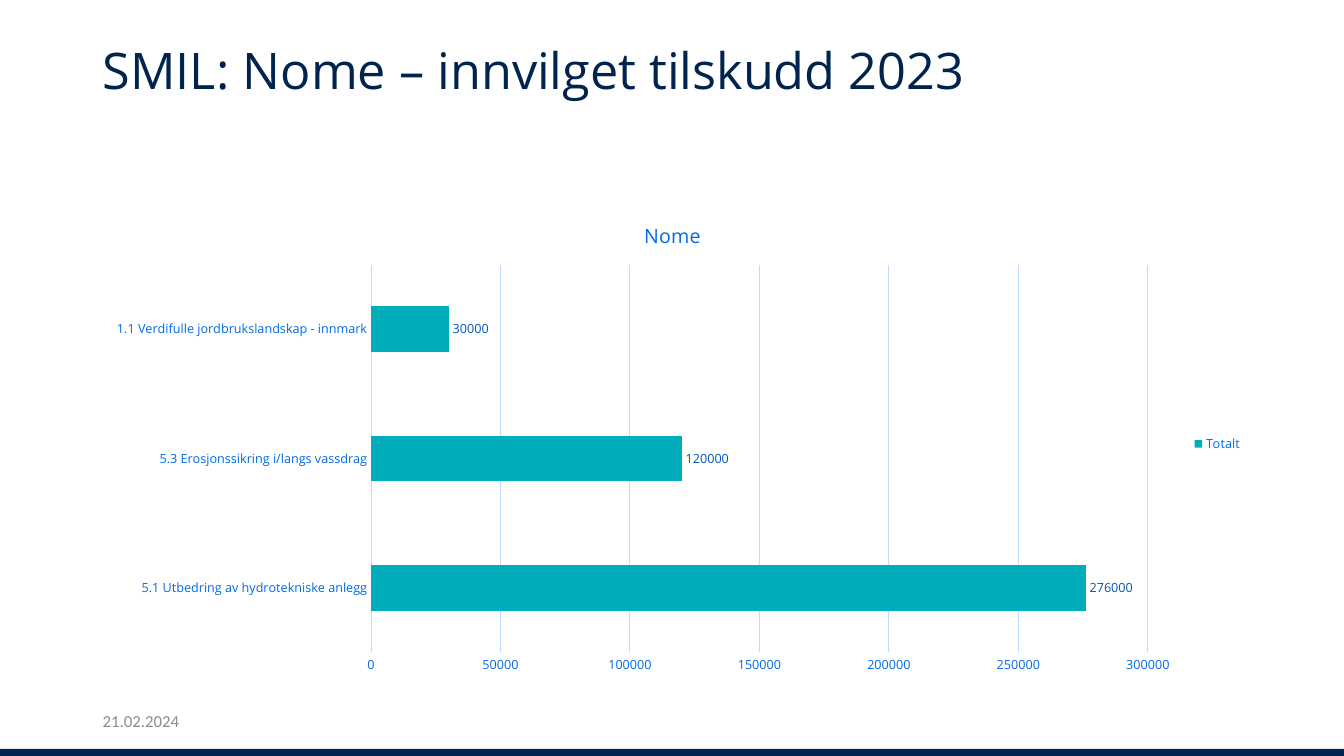
from lxml import etree
from pptx import Presentation
from pptx.chart.data import CategoryChartData
from pptx.dml.color import RGBColor
from pptx.enum.chart import XL_CHART_TYPE, XL_LABEL_POSITION, XL_LEGEND_POSITION, XL_TICK_MARK
from pptx.enum.shapes import MSO_SHAPE
from pptx.enum.text import MSO_ANCHOR, PP_ALIGN
from pptx.oxml import parse_xml
from pptx.oxml.ns import nsdecls, qn
from pptx.util import Inches, Pt

BAR_CLUSTERED = XL_CHART_TYPE.BAR_CLUSTERED
OUTSIDE_END = XL_LABEL_POSITION.OUTSIDE_END
LEGEND_RIGHT = XL_LEGEND_POSITION.RIGHT
NO_TICK = XL_TICK_MARK.NONE
RECTANGLE = MSO_SHAPE.RECTANGLE
TOP, MIDDLE = MSO_ANCHOR.TOP, MSO_ANCHOR.MIDDLE
LEFT = PP_ALIGN.LEFT

COLORS = {
    "navy": "00244E",
    "blue": "006AE5",
    "label": "0056BA",
    "grid": "BEDCFF",
    "teal": "00ADBA",
    "grey": "8C8C8C",
}
BODY_FONT = "Open Sans"


def color(name):
    return RGBColor.from_string(COLORS[name])


def write(frame, text=None, *, size, ink, font=BODY_FONT, anchor=None, spacing=None):
    """Format a text frame, or any chart part that has a font when text is None."""
    target = frame
    if text is not None:
        frame.text = text
        target = frame.paragraphs[0]
        if anchor is not None:
            frame.word_wrap = True
            frame.vertical_anchor = anchor
            target.alignment = LEFT
        if spacing:
            target.line_spacing = spacing
        target = target.runs[0]
    target.font.size = Pt(size)
    target.font.name = font
    target.font.bold = False
    target.font.color.rgb = color(ink)


prs = Presentation()
prs.slide_width, prs.slide_height = Inches(13.33), Inches(7.5)
slide = prs.slides.add_slide(prs.slide_layouts[5])

footer_band = slide.shapes.add_shape(
    RECTANGLE, 0, Inches(7.43), prs.slide_width, Inches(0.08))
footer_band.shadow.inherit = False
footer_band.fill.solid()
footer_band.fill.fore_color.rgb = color("navy")
footer_band.line.fill.background()

heading = slide.shapes.title
heading.left, heading.top = Inches(0.92), Inches(0.41)
heading.width, heading.height = Inches(11.36), Inches(1.44)
write(heading.text_frame, "SMIL: Nome – innvilget tilskudd 2023",
      size=36, ink="navy", anchor=TOP, spacing=0.9)

date = slide.shapes.add_textbox(Inches(0.92), Inches(6.95), Inches(3), Inches(0.4))
write(date.text_frame, "21.02.2024", size=12, ink="grey", font="Calibri", anchor=MIDDLE)

# Grants per measure, listed from the bottom bar upwards
grants = CategoryChartData()
grants.categories = [
    "5.1 Utbedring av hydrotekniske anlegg",
    "5.3 Erosjonssikring i/langs vassdrag",
    "1.1 Verdifulle jordbrukslandskap - innmark",
]
grants.add_series("Totalt", [276000, 120000, 30000])
chart = slide.shapes.add_chart(
    BAR_CLUSTERED, Inches(0.92), Inches(2), Inches(11.5), Inches(4.81), grants).chart
write(chart, size=10, ink="navy")
chart.has_title = True
write(chart.chart_title.text_frame, "Nome", size=14, ink="blue")
chart.chart_title.include_in_layout = False

chart.has_legend = True
chart.legend.position = LEGEND_RIGHT
chart.legend.include_in_layout = False
write(chart.legend, size=9, ink="blue")

measures, amounts = chart.category_axis, chart.value_axis
for axis in (measures, amounts):
    axis.major_tick_mark = axis.minor_tick_mark = NO_TICK
    write(axis.tick_labels, size=9, ink="blue")
amounts.minimum_scale, amounts.maximum_scale, amounts.major_unit = 0, 300000, 50000
amounts.format.line.fill.background()
amounts.has_major_gridlines = True
for line in (measures.format.line, amounts.major_gridlines.format.line):
    line.color.rgb = color("grid")
    line.width = Pt(0.75)

plot = chart.plots[0]
plot.gap_width = 182
plot.vary_by_categories = False
totals = plot.series[0]
totals.format.fill.solid()
totals.format.fill.fore_color.rgb = color("teal")
labels = totals.data_labels
labels.show_value = True
labels.position = OUTSIDE_END
write(labels, size=9, ink="label")

# Fixed inner plot area, as fractions of the chart frame
layout = parse_xml(f"<c:layout {nsdecls('c')}/>")
manual = etree.SubElement(layout, qn("c:manualLayout"))
for tag, value in (("layoutTarget", "inner"), ("xMode", "edge"), ("yMode", "edge"),
                   ("x", "0.24"), ("y", "0.13"), ("w", "0.67"), ("h", "0.8")):
    etree.SubElement(manual, qn(f"c:{tag}")).set("val", value)
plot_area = chart.element.chart.plotArea
for automatic in plot_area.findall(qn("c:layout")):
    plot_area.remove(automatic)
plot_area.insert(0, layout)

prs.save("out.pptx")
